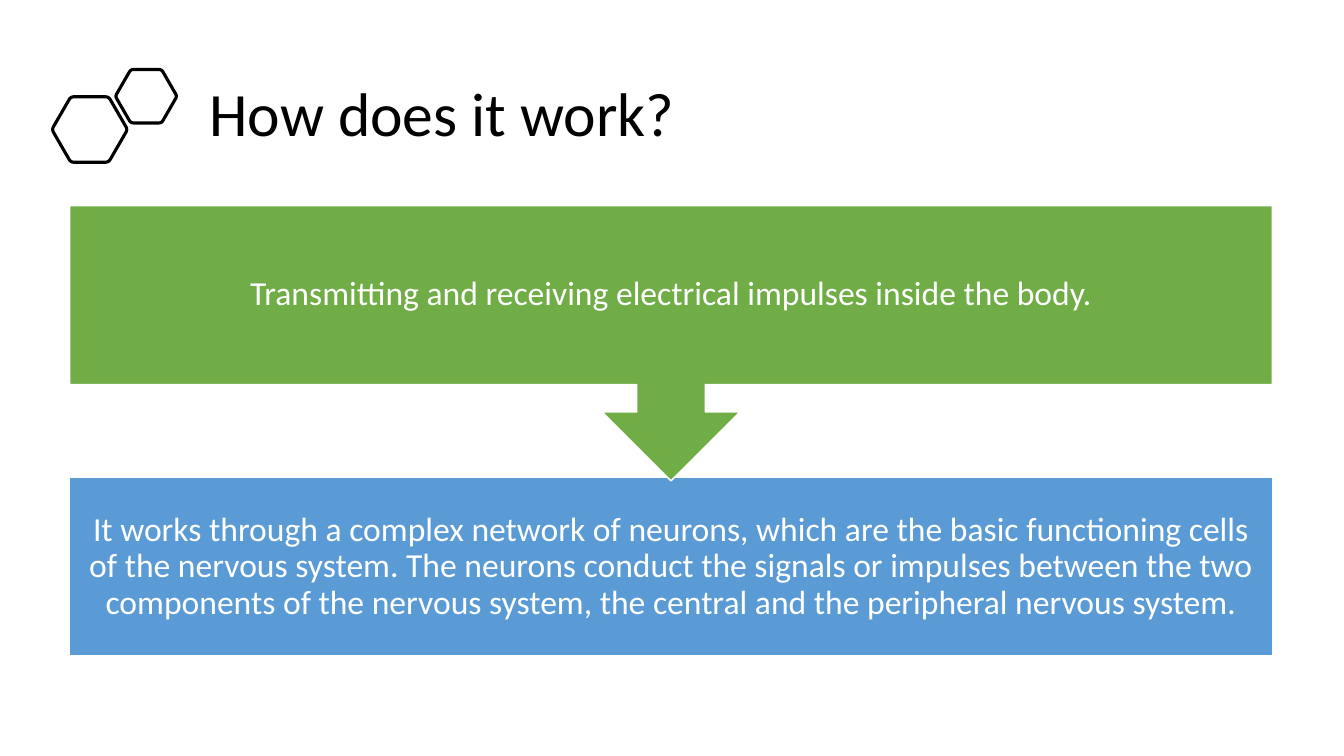
from dataclasses import dataclass
from math import cos, pi, sin, sqrt

from pptx import Presentation
from pptx.dml.color import RGBColor
from pptx.enum.shapes import MSO_SHAPE as Shape
from pptx.enum.text import MSO_ANCHOR as Anchor, PP_ALIGN as Align
from pptx.util import Inches, Pt


@dataclass(frozen=True)
class Theme:
    font: str = "Calibri"
    title_size: int = 44
    step_size: int = 24
    ink: str = "000000"
    paper: str = "FFFFFF"
    green: str = "70AD47"
    blue: str = "5B9BD5"


THEME = Theme()
TITLE = "How does it work?"
STEPS = (
    "Transmitting and receiving electrical impulses inside the body.",
    "It works through a complex network of neurons, which are the basic "
    "functioning cells of the nervous system. The neurons conduct the signals "
    "or impulses between the two components of the nervous system, the central "
    "and the peripheral nervous system.",
)


def add_text(slide, box, text, *, size, color, align=Align.LEFT, inset=(0.1, 0.05)):
    frame = slide.shapes.add_textbox(*map(Inches, box)).text_frame
    frame.word_wrap = True
    frame.vertical_anchor = Anchor.MIDDLE
    frame.margin_left = frame.margin_right = Inches(inset[0])
    frame.margin_top = frame.margin_bottom = Inches(inset[1])
    paragraph = frame.paragraphs[0]
    paragraph.text = text
    paragraph.alignment = align
    paragraph.line_spacing = 0.9
    paragraph.font.name = THEME.font
    paragraph.font.size = Pt(size)
    paragraph.font.color.rgb = RGBColor.from_string(color)


def style_shape(shape, *, fill=None, line, width):
    shape.shadow.inherit = False
    if fill:
        shape.fill.solid()
        shape.fill.fore_color.rgb = RGBColor.from_string(fill)
    else:
        shape.fill.background()
    shape.line.color.rgb = RGBColor.from_string(line)
    shape.line.width = Pt(width)


def rounded_hexagon(center_x, center_y, height, cut=0.09, steps=6):
    """Outline points; each corner is a quadratic curve from edge to edge."""
    radius = height / sqrt(3)
    corners = [(center_x + radius * cos(i * pi / 3),
                center_y + radius * sin(i * pi / 3)) for i in range(6)]

    def toward(start, end):
        return [a + (b - a) * cut for a, b in zip(start, end)]

    points = []
    for i, corner in enumerate(corners):
        entry = toward(corner, corners[i - 1])
        leave = toward(corner, corners[(i + 1) % 6])
        for step in range(steps + 1):
            t = step / steps
            points.append(tuple(
                Inches((1 - t) ** 2 * a + 2 * t * (1 - t) * b + t ** 2 * c)
                for a, b, c in zip(entry, corner, leave)))
    return points


def add_hexagons(slide, box):
    left, top, width, height = box
    large, small = 0.65, 0.53
    # The large one sits at the lower left, the small one at the upper right
    for x, y, size in (
        (left + 0.37, top + height - large / 2, large),
        (left + width - 0.3, top + small / 2, small),
    ):
        points = rounded_hexagon(x, y, size)
        builder = slide.shapes.build_freeform(*points[0], scale=1.0)
        builder.add_line_segments(points[1:], close=True)
        style_shape(builder.convert_to_shape(), line=THEME.ink, width=2.25)


def add_header(slide, box):
    left, top, width, height = box
    add_hexagons(slide, (left, top + 0.12, 1.23, 0.92))
    add_text(slide, (left + 1.46, top, width - 1.46, height), TITLE,
             size=THEME.title_size, color=THEME.ink)


def add_process(slide, box):
    left, top, width, height = box
    step_height, callout_height = 1.77, 2.73
    first = (left, top, width, step_height)
    second = (left, top + height - step_height, width, step_height)
    callout = (left, top, width, callout_height)

    # The callout lies over the lower block, so it is drawn last
    for kind, area, text_area, text, color, turn in (
        (Shape.RECTANGLE, second, second, STEPS[1], THEME.blue, 0),
        (Shape.UP_ARROW_CALLOUT, callout, first, STEPS[0], THEME.green, 180),
    ):
        block = slide.shapes.add_shape(kind, *map(Inches, area))
        block.rotation = turn
        style_shape(block, fill=color, line=THEME.paper, width=1)
        add_text(slide, text_area, text, size=THEME.step_size,
                 color=THEME.paper, align=Align.CENTER, inset=(0.19, 0.19))


def main():
    deck = Presentation()
    deck.slide_width, deck.slide_height = Inches(13.33), Inches(7.5)
    slide = deck.slides.add_slide(deck.slide_layouts[6])
    add_header(slide, (0.52, 0.57, 12.27, 1.17))
    add_process(slide, (0.69, 2.04, 11.93, 4.47))
    deck.save("out.pptx")


if __name__ == "__main__":
    main()
